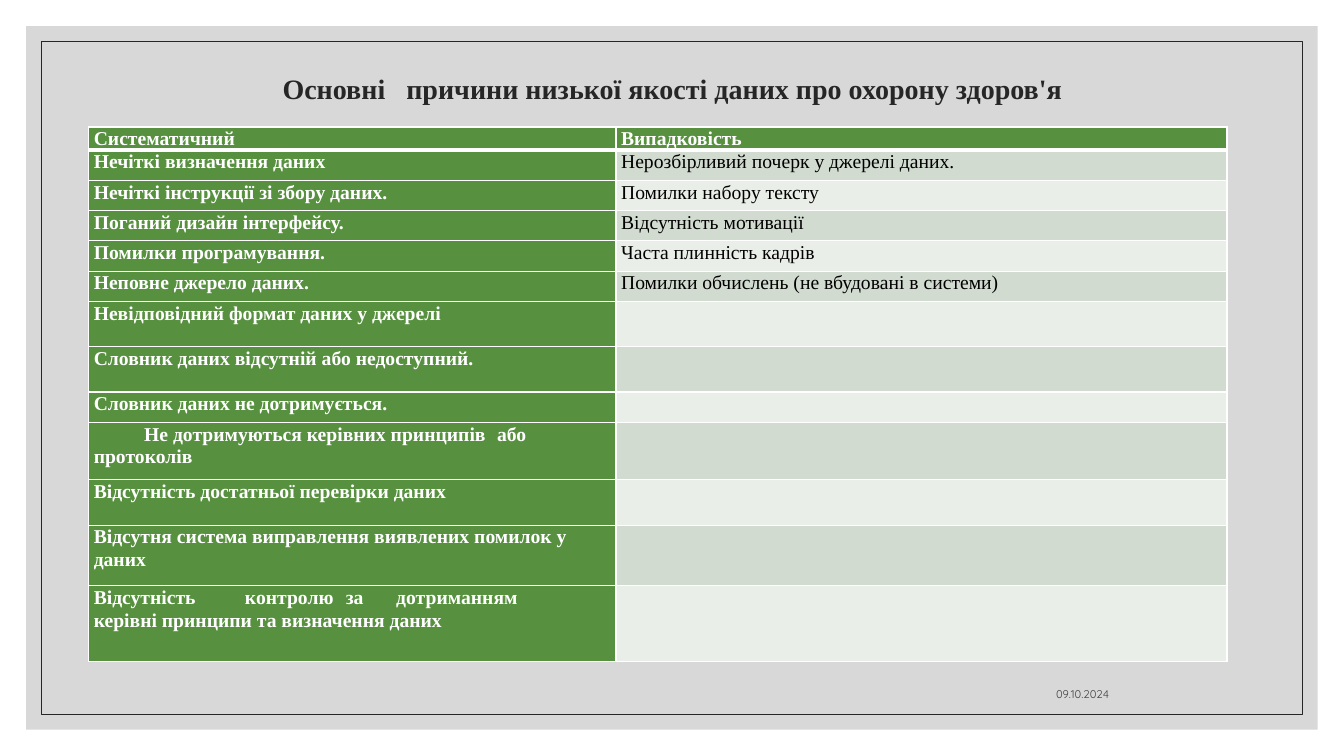
"""Build a slide with a table of the reasons for poor health data quality."""
from lxml.etree import SubElement
from pptx import Presentation
from pptx.dml.color import RGBColor
from pptx.enum.shapes import MSO_SHAPE
from pptx.enum.text import MSO_ANCHOR, PP_ALIGN
from pptx.oxml.ns import qn
from pptx.util import Inches, Pt

COLOURS = {
    "panel": "BFBFBF", "ink": "262626", "date": "404040", "green": "57903F",
    "odd": "D1DBCF", "even": "EAEEE8", "white": "FFFFFF", "black": "000000",
}
SERIF = "Times New Roman"
WIDTH, HEIGHT = Inches(13.33), Inches(7.5)


def share(left, top, width, height):
    """Turn percentages of the slide into lengths."""
    return (int(WIDTH * left / 100), int(HEIGHT * top / 100),
            int(WIDTH * width / 100), int(HEIGHT * height / 100))


def style(para, name, size, colour, bold=False):
    """Set the font of a whole paragraph."""
    para.font.name = name
    para.font.size = Pt(size)
    para.font.bold = bold
    para.font.color.rgb = RGBColor.from_string(COLOURS[colour])


deck = Presentation()
deck.slide_width, deck.slide_height = WIDTH, HEIGHT
page = deck.slides.add_slide(deck.slide_layouts[5])
title = page.shapes.title

panel, frame = [
    page.shapes.add_shape(MSO_SHAPE.RECTANGLE, inset, inset, WIDTH - 2 * inset, HEIGHT - 2 * inset)
    for inset in (Inches(0.26), Inches(0.41))
]
for box in (panel, frame):
    box.shadow.inherit = False
    title.element.addprevious(box.element)
panel.line.fill.background()
panel.fill.solid()
panel.fill.fore_color.rgb = RGBColor.from_string(COLOURS["panel"])
panel_colour = panel.element.spPr.find(qn("a:solidFill")).find(qn("a:srgbClr"))
SubElement(panel_colour, qn("a:alpha"), val="60000")
frame.fill.background()
frame.line.color.rgb = RGBColor.from_string(COLOURS["ink"])
frame.line.width = Pt(0.5)

title.left, title.top, title.width, title.height = share(8.78, 9.33, 82.52, 5.33)
title.text_frame.text = "Основні   причини низької якості даних про охорону здоров'я"
title.text_frame.word_wrap = True
title.text_frame.vertical_anchor = MSO_ANCHOR.MIDDLE
heading = title.text_frame.paragraphs[0]
heading.alignment = PP_ALIGN.CENTER
heading.line_spacing = 0.9
style(heading, SERIF, 20, "ink", True)

REASONS = [
    (3.07, "Систематичний", "Випадковість"),
    (4, "Нечіткі визначення даних", "Нерозбірливий почерк у джерелі даних."),
    (4, "Нечіткі інструкції зі збору даних.", "Помилки набору тексту"),
    (4, "Поганий дизайн інтерфейсу.", "Відсутність мотивації"),
    (4, "Помилки програмування.", "Часта плинність кадрів"),
    (4, "Неповне джерело даних.", "Помилки обчислень (не вбудовані в системи)"),
    (6, "Невідповідний формат даних у джерелі", ""),
    (6, "Словник даних відсутній або недоступний.", ""),
    (4, "Словник даних не дотримується.", ""),
    (7.6, "\tНе дотримуються керівних принципів \tабо \tпротоколів", ""),
    (6, "Відсутність достатньої перевірки даних", ""),
    (8, "Відсутня система виправлення виявлених помилок у даних", ""),
    (10, "Відсутність \tконтролю \tза \tдотриманням\nкерівні принципи та визначення даних", ""),
]
TAB_STOPS = {
    9: [(0.1, "l")],
    12: [(0.59, "ctr"), (1.12, "ctr"), (1.75, "ctr"), (2.41, "r")],
}

table = page.shapes.add_table(len(REASONS), 2, *share(6.6, 16.8, 84.7, 70.67)).table
for column, width in zip(table.columns, (39.24, 45.46)):
    column.width = int(WIDTH * width / 100)

for row, (height, *texts) in enumerate(REASONS):
    table.rows[row].height = int(HEIGHT * height / 100)
    for column, text in enumerate(texts):
        cell = table.cell(row, column)
        cell.margin_left = cell.margin_right = Inches(0.03)
        cell.margin_top = cell.margin_bottom = 0
        properties = cell._tc.get_or_add_tcPr()
        for side in ("lnL", "lnR", "lnT", "lnB"):
            thick = (row, side) in ((0, "lnB"), (1, "lnT"))
            border = SubElement(properties, qn(f"a:{side}"), w=str(Pt(3 if thick else 1)))
            SubElement(SubElement(border, qn("a:solidFill")), qn("a:srgbClr"), val=COLOURS["white"])

        strong = row == 0 or column == 0
        fill = "green" if strong else "odd" if row % 2 else "even"
        cell.fill.solid()
        cell.fill.fore_color.rgb = RGBColor.from_string(COLOURS[fill])
        cell.text_frame.text = text
        for number, para in enumerate(cell.text_frame.paragraphs):
            para.line_spacing = 1.06
            layout = para._p.get_or_add_pPr()
            layout.set("marL", str(Inches(0.02)))
            layout.set("indent", "0")
            if column == 0 and number == 0 and row in TAB_STOPS:
                stops = SubElement(layout, qn("a:tabLst"))
                for position, alignment in TAB_STOPS[row]:
                    SubElement(stops, qn("a:tab"), pos=str(Inches(position)), algn=alignment)
            style(para, SERIF, 14, "white" if strong else "black", strong)

date_box = page.shapes.add_textbox(*share(59.56, 88, 23.71, 5.33))
date_box.text_frame.word_wrap = True
date_box.text_frame.vertical_anchor = MSO_ANCHOR.BOTTOM
date_box.text_frame.text = "09.10.2024"
date_line = date_box.text_frame.paragraphs[0]
date_line.alignment = PP_ALIGN.RIGHT
style(date_line, "Quicksand", 8, "date")

deck.save("out.pptx")
